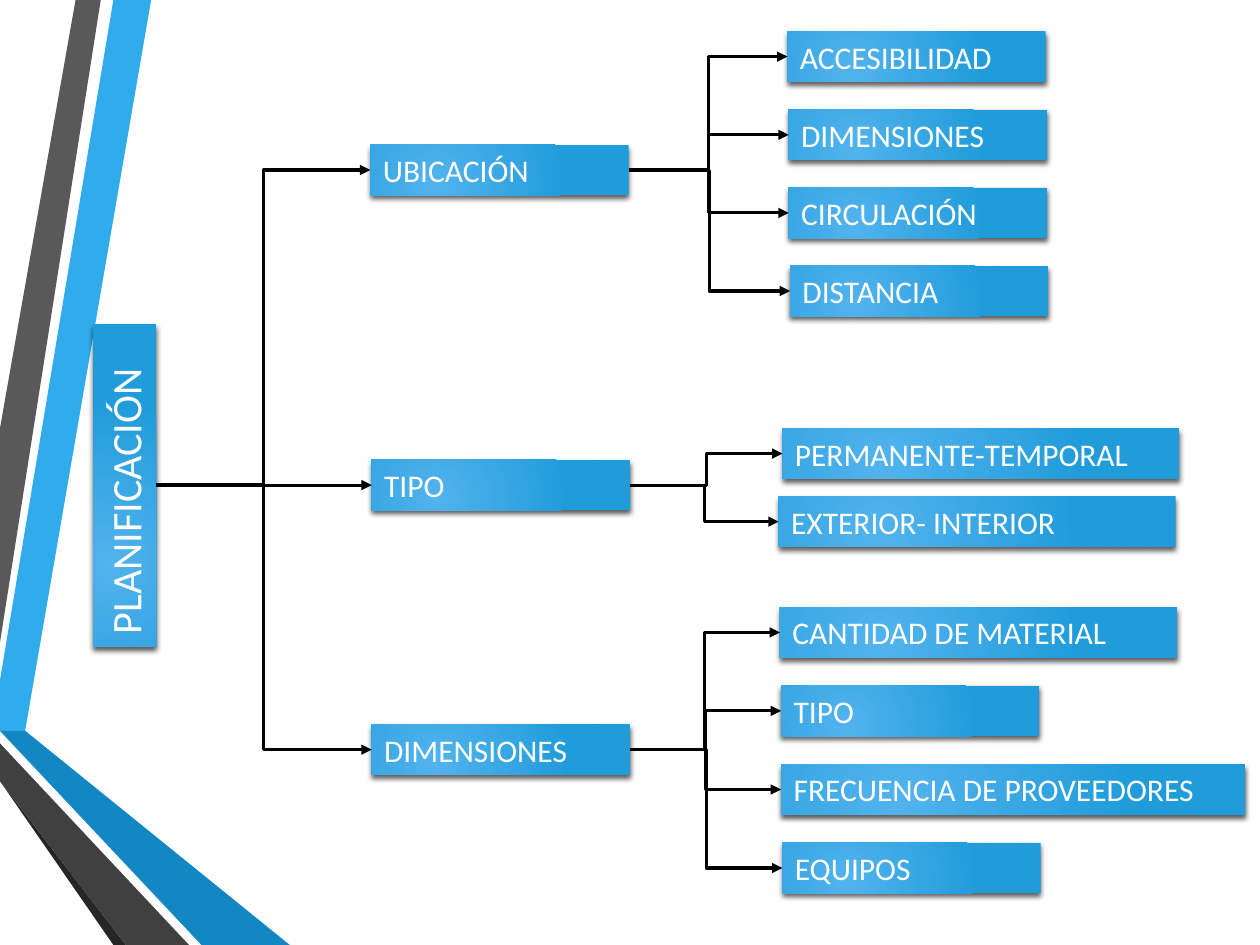
from dataclasses import dataclass

from lxml import etree
from pptx import Presentation, util as u
from pptx.dml.color import RGBColor
from pptx.enum import shapes, text
from pptx.oxml import ns

CELL = u.Inches(0.1)  # the slide is a grid of 100 columns by 75 rows
COLUMNS, ROWS = 100, 75
BOX_HEIGHT, SHORT, MEDIUM, LONG = 4, 20.5, 31.5, 36.8


@dataclass(frozen=True)
class Theme:
    font: str = "Calibri"
    root_size: int = 24
    box_size: int = 18
    text: str = "FFFFFF"
    glow: str = "51B3ED"
    box: str = "219CDB"
    line: str = "000000"
    line_width: float = 1.75


THEME = Theme()

RIBBONS = [
    ("30ACEC", [(0, 54.4), (0, 57.5), (2.2, 57.9), (11.7, 0), (8.9, 0)]),
    ("595959", [(8.3, 0), (5.5, 0), (0, 33.6), (0, 50.6)]),
    ("262626", [(0, 61.9), (0, 62.1), (9.3, 75), (9.9, 75)]),
    ("0C5A82", [(0, 57.9), (0, 58), (15.6, 75), (16.3, 75)]),
    ("1287C3", [(0, 57.9), (16.3, 75), (23.3, 75), (2.2, 57.9), (0, 57.5)]),
    ("404040", [(0, 61.9), (9.9, 75), (15.1, 75), (0, 58.6)]),
]

# branch: label, column, row, first leaf row, leaf pitch, leaves (label, column, width)
BRANCHES = [
    ("UBICACIÓN", 29.4, 11.5, 2.5, 6.2, [
        ("ACCESIBILIDAD", 62.5, SHORT), ("DIMENSIONES", 62.6, SHORT),
        ("CIRCULACIÓN", 62.6, SHORT), ("DISTANCIA", 62.7, SHORT)]),
    ("TIPO", 29.5, 36.5, 34, 5.4, [
        ("PERMANENTE-TEMPORAL", 62.1, MEDIUM), ("EXTERIOR- INTERIOR", 61.8, MEDIUM)]),
    ("DIMENSIONES", 29.5, 57.5, 48.2, 6.23, [
        ("CANTIDAD DE MATERIAL", 61.9, MEDIUM), ("TIPO", 62, SHORT),
        ("FRECUENCIA DE PROVEEDORES", 62, LONG), ("EQUIPOS", 62.1, SHORT)]),
]


def grid(*cells):
    return [u.Emu(round(cell * CELL)) for cell in cells]


def add_xml(parent, tag, **attributes):
    return etree.SubElement(parent, ns.qn(tag), attributes)


def draw_ribbon(slide, colour, points):
    builder = slide.shapes.build_freeform(*points[0], scale=float(CELL))
    builder.add_line_segments(points[1:], close=True)
    ribbon = builder.convert_to_shape()
    ribbon.shadow.inherit = False
    ribbon.fill.solid()
    ribbon.fill.fore_color.rgb = RGBColor.from_string(colour)
    ribbon.line.fill.background()


def apply_glow(box):
    """Radial gradient centred on the lower middle of the box."""
    box.fill.gradient()
    for stop, colour, position in zip(box.fill.gradient_stops, (THEME.glow, THEME.box), (0, 1)):
        stop.color.rgb = RGBColor.from_string(colour)
        stop.position = position
    linear = box._element.spPr.find(".//" + ns.qn("a:lin"))
    gradient = linear.getparent()
    gradient.remove(linear)
    radial = add_xml(gradient, "a:path", path="circle")
    add_xml(radial, "a:fillToRect", l="50000", t="100000", r="100000", b="50000")


def apply_shadow(box):
    box.shadow.inherit = False
    effects = box._element.spPr.find(ns.qn("a:effectLst"))
    shadow = add_xml(effects, "a:outerShdw", blurRad=str(u.Pt(3)), dist=str(u.Pt(2)),
                     dir="5400000", algn="ctr", rotWithShape="0")
    colour = add_xml(shadow, "a:srgbClr", val=THEME.line)
    add_xml(colour, "a:alpha", val="64000")


def draw_box(slide, label, column, row, width, height=BOX_HEIGHT, size=THEME.box_size):
    box = slide.shapes.add_shape(shapes.MSO_SHAPE.RECTANGLE, *grid(column, row, width, height))
    apply_glow(box)
    box.line.fill.background()
    apply_shadow(box)
    frame = box.text_frame
    frame_format = {"word_wrap": True, "vertical_anchor": text.MSO_ANCHOR.TOP,
                    "auto_size": text.MSO_AUTO_SIZE.SHAPE_TO_FIT_TEXT}
    for name, value in frame_format.items():
        setattr(frame, name, value)
    paragraph = frame.paragraphs[0]
    paragraph.alignment = text.PP_ALIGN.LEFT
    run = paragraph.add_run()
    run.text = label
    for name, value in {"name": THEME.font, "size": u.Pt(size)}.items():
        setattr(run.font, name, value)
    run.font.color.rgb = RGBColor.from_string(THEME.text)
    return box


def draw_arrow(slide, start, end):
    arrow = slide.shapes.add_connector(shapes.MSO_CONNECTOR.ELBOW, *grid(*start, *end))
    arrow.line.color.rgb = RGBColor.from_string(THEME.line)
    arrow.line.width = u.Pt(THEME.line_width)
    add_xml(arrow.line._get_or_add_ln(), "a:tailEnd", type="triangle")
    add_xml(arrow._element.spPr, "a:effectLst")


def draw_tree(slide):
    root = draw_box(slide, "PLANIFICACIÓN", -2.9, 36, 25.6, 5, THEME.root_size)
    root.rotation = 270
    root_exit = (12.4, 38.5)
    links = []
    middle = BOX_HEIGHT / 2
    for label, column, row, first_row, pitch, leaves in BRANCHES:
        draw_box(slide, label, column, row, SHORT)
        links.append((root_exit, (column, row + middle)))
        branch_exit = (column + SHORT, row + middle)
        for index, (leaf, leaf_column, width) in enumerate(leaves):
            leaf_row = first_row + index * pitch
            draw_box(slide, leaf, leaf_column, leaf_row, width)
            links.append((branch_exit, (leaf_column, leaf_row + middle)))
    for start, end in links:
        draw_arrow(slide, start, end)


def main():
    deck = Presentation()
    deck.slide_width, deck.slide_height = grid(COLUMNS, ROWS)
    slide = deck.slides.add_slide(deck.slide_layouts[6])
    for colour, points in RIBBONS:
        draw_ribbon(slide, colour, points)
    draw_tree(slide)
    deck.save("out.pptx")


if __name__ == "__main__":
    main()
